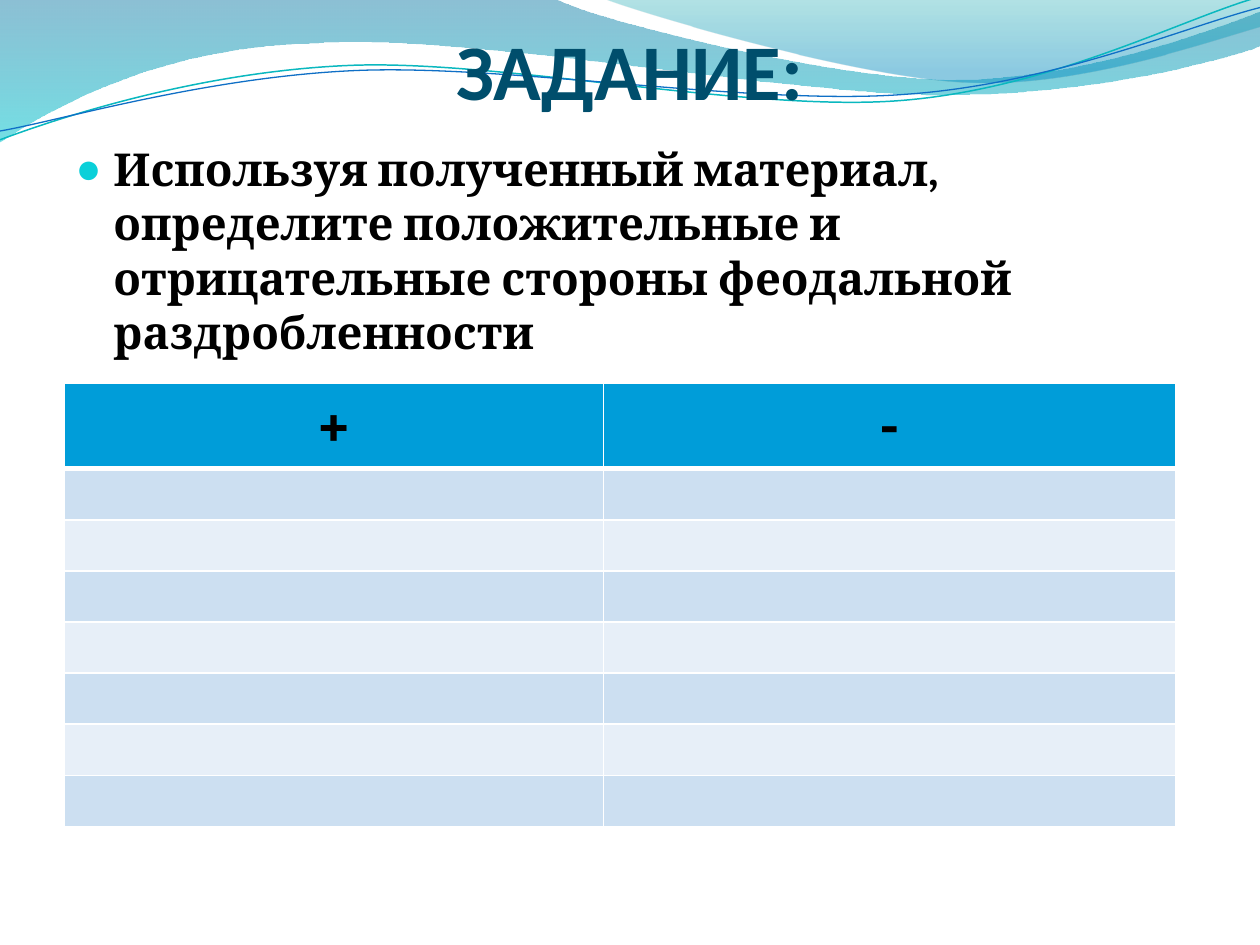
from pptx import Presentation
from pptx.dml.color import RGBColor
from pptx.enum import text as t
from pptx.oxml import ns, xmlchemy as x
from pptx.util import Inches, Pt

WHITE = RGBColor(0xFF, 0xFF, 0xFF)
BLACK = RGBColor(0, 0, 0)
TITLE = RGBColor(0x00, 0x4E, 0x6C)
BULLET = RGBColor(0x0B, 0xD0, 0xD9)
HEADER = RGBColor(0x00, 0x9D, 0xD9)
BANDS = RGBColor(0xE7, 0xEF, 0xF8), RGBColor(0xCC, 0xDF, 0xF1)
TEAL = RGBColor(0x0A, 0xB8, 0xBF)
BLUE = RGBColor(0x0F, 0x6F, 0xC6)
LEFT_WAVE = ((RGBColor(0x00, 0x74, 0xA1), 0, 45), (RGBColor(0x00, 0xC6, 0xCF), 1, 55))
RIGHT_WAVE = ((RGBColor(0x00, 0xA1, 0xA9), 0, 30), (RGBColor(0x00, 0x8B, 0xBF), 0.8, 45))


def add_xml(parent, tag, **attributes):
    """Append a DrawingML element to the parent and return it."""
    element = x.OxmlElement(tag)
    for name, value in attributes.items():
        element.set(name, str(value))
    parent.append(element)
    return element


class SlideBuilder:
    """Hold the text style and the current slide, and add each kind of element."""

    def __init__(self, slide, heading_font, text_font):
        self.slide = slide
        self.heading_font = heading_font
        self.text_font = text_font

    def add_run(self, paragraph, text, font, size, color):
        run = paragraph.add_run()
        run.text = text
        run.font.name = font
        run.font.size = Pt(size)
        run.font.bold = True
        run.font.color.rgb = color

    def add_path(self, start, segments, closed):
        points = [(Inches(segment[i]), Inches(segment[i + 1]))
                  for segment in segments for i in range(0, len(segment), 2)]
        builder = self.slide.shapes.build_freeform(Inches(start[0]), Inches(start[1]))
        builder.add_line_segments(points, close=closed)
        shape = builder.convert_to_shape()
        shape.shadow.inherit = False
        lines = iter(list(shape.element.iter(ns.qn("a:lnTo"))))
        for segment in segments:
            first = next(lines)
            if len(segment) == 6:
                curve = x.OxmlElement("a:cubicBezTo")
                first.addprevious(curve)
                for line in (first, next(lines), next(lines)):
                    curve.append(line[0])
                    line.getparent().remove(line)
        return shape

    def add_wave(self, start, segments, stops):
        shape = self.add_path(start, segments, True)
        shape.line.fill.background()
        shape.fill.gradient()
        shape.fill.gradient_angle = 270
        for stop, (color, position, _) in zip(shape.fill.gradient_stops, stops):
            stop.color.rgb = color
            stop.position = position
        for element, (_, _, opacity) in zip(shape.element.iter(ns.qn("a:srgbClr")), stops):
            add_xml(element, "a:alpha", val=opacity * 1000)

    def add_curve(self, start, segments, color, width):
        shape = self.add_path(start, segments, False)
        shape.fill.background()
        shape.line.color.rgb = color
        shape.line.width = Pt(width)

    def bring_placeholders_forward(self):
        for placeholder in list(self.slide.placeholders):
            self.slide.shapes.element.append(placeholder.element)

    def place(self, shape, left, top, width, height):
        shape.left, shape.top = Inches(left), Inches(top)
        shape.width, shape.height = Inches(width), Inches(height)
        shape.text_frame.auto_size = t.MSO_AUTO_SIZE.NONE
        return shape.text_frame

    def add_title(self, text, *box):
        frame = self.place(self.slide.shapes.title, *box)
        frame.margin_left = frame.margin_right = frame.margin_bottom = 0
        frame.vertical_anchor = t.MSO_ANCHOR.BOTTOM
        paragraph = frame.paragraphs[0]
        paragraph.alignment = t.PP_ALIGN.CENTER
        self.add_run(paragraph, text, self.heading_font, 45, TITLE)

    def add_body(self, text, *box):
        frame = self.place(self.slide.placeholders[1], *box)
        frame.vertical_anchor = t.MSO_ANCHOR.TOP
        paragraph = frame.paragraphs[0]
        paragraph.space_before = Pt(5)
        paragraph.line_spacing = 1.0
        self.add_run(paragraph, text, self.text_font, 25.9, BLACK)
        properties = paragraph._p.get_or_add_pPr()
        properties.set("marL", str(Inches(0.3)))
        properties.set("indent", str(-Inches(0.3)))
        add_xml(add_xml(properties, "a:buClr"), "a:srgbClr", val=BULLET)
        add_xml(properties, "a:buSzPct", val=95000)
        add_xml(properties, "a:buChar", char="●")

    def set_borders(self, cell, bottom):
        properties = cell._tc.get_or_add_tcPr()
        for index, (side, width) in enumerate(zip("LRTB", (1, 1, 1, bottom))):
            line = x.OxmlElement(f"a:ln{side}")
            line.set("w", str(Pt(width)))
            add_xml(add_xml(line, "a:solidFill"), "a:srgbClr", val=WHITE)
            properties.insert(index, line)

    def add_table(self, headings, left, top, widths, heights):
        frame = self.slide.shapes.add_table(
            len(heights), len(widths), Inches(left), Inches(top),
            Inches(sum(widths)), Inches(sum(heights)))
        table = frame.table
        for column, width in zip(table.columns, widths):
            column.width = Inches(width)
        for index, (row, height) in enumerate(zip(table.rows, heights)):
            row.height = Inches(height)
            for cell in row.cells:
                cell.fill.solid()
                cell.fill.fore_color.rgb = BANDS[index % 2] if index else HEADER
                self.set_borders(cell, 1 if index else 3)
        for cell, heading in zip(table.rows[0].cells, headings):
            paragraph = cell.text_frame.paragraphs[0]
            paragraph.alignment = t.PP_ALIGN.CENTER
            self.add_run(paragraph, heading, self.text_font, 36, BLACK)


def main():
    presentation = Presentation()
    presentation.slide_width, presentation.slide_height = Inches(10), Inches(7.5)
    slide = presentation.slides.add_slide(presentation.slide_layouts[1])
    builder = SlideBuilder(slide, "Calibri", "Cambria")
    builder.add_wave((0, 0), [
        (4.4, -0.01), (4.76, 0.17, 6.64, 0.63, 7.58, 0.63), (8.53, 0.63, 9.58, 0.26, 10, 0.09),
        (10.01, 0.36), (9.83, 0.44, 8.7, 0.76, 7.46, 0.75), (6.22, 0.75, 3.82, 0.28, 2.57, 0.34),
        (1.29, 0.36, 0.46, 0.83, -0.01, 1.13)], LEFT_WAVE)
    builder.add_wave((4.79, -0.01), [
        (5.09, 0.11, 6.82, 0.62, 7.69, 0.65), (8.56, 0.69, 9.61, 0.32, 10, 0.21), (10, 0)],
        RIGHT_WAVE)
    builder.add_curve((0, 1.11), [
        (0.48, 0.93, 1.58, 0.57, 2.77, 0.52), (3.95, 0.47, 5.93, 0.89, 7.13, 0.8),
        (8.33, 0.71, 9.38, 0.15, 9.98, -0.02)], TEAL, 0.85)
    builder.add_curve((0, 1.04), [
        (0.47, 0.96, 1.64, 0.61, 2.83, 0.56), (4.03, 0.51, 5.97, 0.84, 7.17, 0.75),
        (8.36, 0.67, 9.41, 0.21, 10, 0.06)], BLUE, 0.75)
    builder.bring_placeholders_forward()
    builder.add_title("ЗАДАНИЕ:", 0.5, 0.13, 9, 0.79)
    builder.add_body("Используя полученный материал, определите положительные и "
                     "отрицательные стороны феодальной раздробленности", 0.5, 1.07, 9, 1.73)
    builder.add_table("+-", 0.51, 3.04, (4.28, 4.54), [0.68] + [2.84 / 7] * 7)
    presentation.save("out.pptx")


if __name__ == "__main__":
    main()
